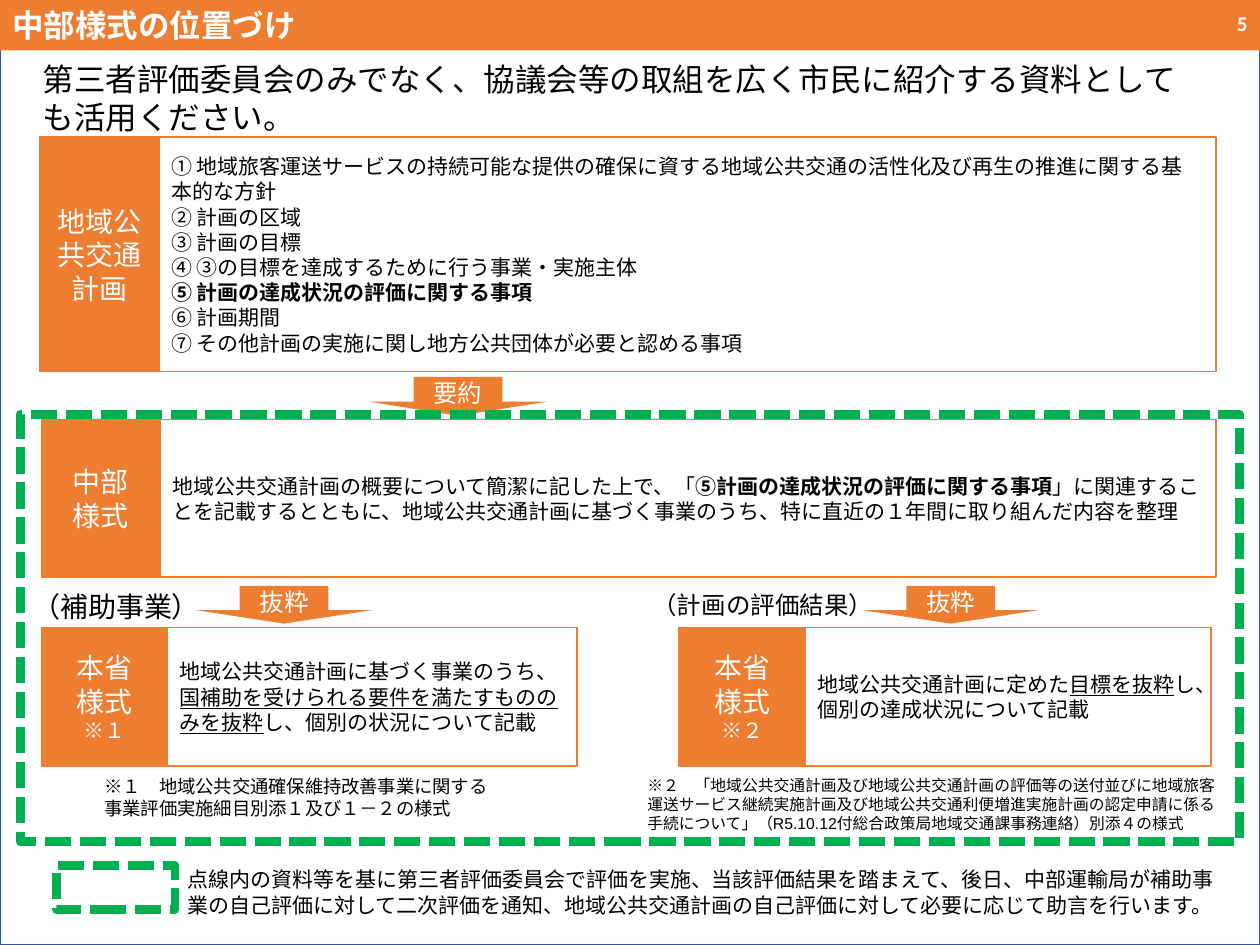
from dataclasses import dataclass

from pptx import Presentation
from pptx.dml.color import RGBColor
from pptx.enum.dml import MSO_LINE
from pptx.enum.shapes import MSO_SHAPE
from pptx.enum.text import MSO_ANCHOR, PP_ALIGN
from pptx.util import Inches, Pt

RECTANGLE, DOWN_ARROW = MSO_SHAPE.RECTANGLE, MSO_SHAPE.DOWN_ARROW
TOP, MIDDLE = MSO_ANCHOR.TOP, MSO_ANCHOR.MIDDLE
LEFT, CENTER, RIGHT = PP_ALIGN.LEFT, PP_ALIGN.CENTER, PP_ALIGN.RIGHT
SHORT_DASH = MSO_LINE.SQUARE_DOT
COLUMNS, ROWS, CELL = 100, 75, 0.1


@dataclass(frozen=True)
class Theme:
    """Colours, fonts and type sizes of the slide."""
    orange: str = "ED7D31"
    green: str = "00B050"
    navy: str = "2F5597"
    white: str = "FFFFFF"
    black: str = "000000"
    font: str = "Calibri"
    note_font: str = "Arial"
    title: float = 18
    label: float = 16
    arrow: float = 14
    body: float = 12
    note: float = 10.5
    small_note: float = 9
    rule: float = 1
    dash: float = 5


THEME = Theme()


@dataclass(frozen=True)
class Box:
    """A region measured in grid cells."""
    left: float
    top: float
    width: float
    height: float

    def inner(self, left, top, width, height):
        """Return a region placed relative to this one."""
        return Box(self.left + left, self.top + top, width, height)

    def lengths(self):
        """Return the position and size as slide lengths."""
        cells = (self.left, self.top, self.width, self.height)
        return [Inches(round(cell * CELL, 2)) for cell in cells]


@dataclass(frozen=True)
class Span:
    """A stretch of text with its own style."""
    text: str
    size: float = THEME.body
    bold: bool = False
    underline: bool = False


def write(shape, paras, color=THEME.black, align=LEFT, anchor=MIDDLE, font=THEME.font):
    """Fill a shape with paragraphs, each a list of spans."""
    frame = shape.text_frame
    frame.word_wrap = True
    frame.vertical_anchor = anchor
    for index, spans in enumerate(paras):
        para = frame.add_paragraph() if index else frame.paragraphs[0]
        para.alignment = align
        for span in spans:
            run = para.add_run()
            run.text = span.text
            run.font.name = font
            run.font.size = Pt(span.size)
            run.font.bold = span.bold
            run.font.underline = span.underline
            run.font.color.rgb = RGBColor.from_string(color)


def add_text(page, box, paras, **style):
    """Add a text box."""
    write(page.shapes.add_textbox(*box.lengths()), paras, **style)


def add_block(page, box, fill=None, line=None, weight=THEME.rule, kind=RECTANGLE):
    """Add a preset shape with an optional fill and outline."""
    shape = page.shapes.add_shape(kind, *box.lengths())
    shape.shadow.inherit = False
    if fill:
        shape.fill.solid()
        shape.fill.fore_color.rgb = RGBColor.from_string(fill)
    else:
        shape.fill.background()
    if line:
        shape.line.color.rgb = RGBColor.from_string(line)
        shape.line.width = Pt(weight)
    else:
        shape.line.fill.background()
    return shape


def add_dashed(page, box):
    """Add a green dashed outline."""
    outline = add_block(page, box, line=THEME.green, weight=THEME.dash)
    outline.line.dash_style = SHORT_DASH


def add_arrow(page, box, text):
    """Add a wide down arrow with a caption."""
    arrow = add_block(page, box, THEME.orange, kind=DOWN_ARROW)
    arrow.adjustments[0], arrow.adjustments[1] = 0.5, 0.36
    write(arrow, [[Span(text, THEME.arrow)]], THEME.white, CENTER)


def add_card(page, box, label_width, label, body):
    """Add an orange label joined to a white body."""
    label_box = box.inner(0, 0, label_width, box.height)
    body_box = box.inner(label_width, 0, box.width - label_width, box.height)
    write(add_block(page, label_box, THEME.orange, THEME.orange), label, THEME.white, CENTER)
    write(add_block(page, body_box, THEME.white, THEME.orange), body)


def add_header(page, box):
    """Add the title bar, page number and lead sentence."""
    bar = add_block(page, box.inner(0, 0, box.width, 4), THEME.orange)
    write(bar, [[Span("中部様式の位置づけ", THEME.title, bold=True)]], THEME.white, anchor=TOP)
    add_text(page, box.inner(88.2, 0, 11.8, 3.7), [[Span("5", bold=True)]],
             color=THEME.white, align=RIGHT)
    lead = "第三者評価委員会のみでなく、協議会等の取組を広く市民に紹介する資料としても活用ください。"
    add_text(page, box.inner(2.4, 4.3, 93.7, 7.1), [[Span(lead, THEME.title)]], anchor=TOP)


def add_plan(page, box):
    """Add the regional plan with its seven items and the arrow below."""
    items = (
        "① 地域旅客運送サービスの持続可能な提供の確保に資する地域公共交通の活性化及び再生の推進に関する基本的な方針",
        "② 計画の区域",
        "③ 計画の目標",
        "④ ③の目標を達成するために行う事業・実施主体",
        "⑤ 計画の達成状況の評価に関する事項",
        "⑥ 計画期間",
        "⑦ その他計画の実施に関し地方公共団体が必要と認める事項",
    )
    body = [[Span(item, bold=item.startswith("⑤"))] for item in items]
    add_card(page, box, 9.4, [[Span("地域公共交通計画", THEME.label)]], body)
    add_arrow(page, box.inner(26.1, 19, 14.1, 3.1), "要約")


def add_summary(page, box):
    """Add the regional form that sums up the plan."""
    label = [[Span(text, THEME.label)] for text in ("中部", "様式")]
    body = [[
        Span("地域公共交通計画の概要について簡潔に記した上で、「"),
        Span("⑤計画の達成状況の評価に関する事項", bold=True),
        Span("」に関連することを記載するとともに、地域公共交通計画に基づく事業のうち、"
             "特に直近の１年間に取り組んだ内容を整理"),
    ]]
    add_card(page, box, 9.4, label, body)


def add_excerpt(page, box, mark, caption, caption_left, arrow_left, body):
    """Add a ministry form with its caption and arrow above."""
    add_text(page, box.inner(caption_left, 0, 20.7, 3.7), [[caption]], anchor=TOP)
    add_arrow(page, box.inner(arrow_left, 0.2, 14.1, 3), "抜粋")
    label = [[Span("本省", THEME.label)], [Span("様式", THEME.label)], [Span(mark)]]
    add_card(page, box.inner(0, 3.5, box.width, 11), 10, label, [body])


def add_notes(page, box):
    """Add the two footnotes under the ministry forms."""
    first = "※１　地域公共交通確保維持改善事業に関する事業評価実施細目別添１及び１－２の様式"
    second = ("※２　「地域公共交通計画及び地域公共交通計画の評価等の送付並びに地域旅客運送サービス継続実施計画"
              "及び地域公共交通利便増進実施計画の認定申請に係る手続について」"
              "（R5.10.12付総合政策局地域交通課事務連絡）別添４の様式")
    add_text(page, box.inner(0, 0, 32.5, 4.5), [[Span(first, THEME.note)]], anchor=TOP)
    add_text(page, box.inner(43.1, 0.1, 47.6, 5.6), [[Span(second, THEME.small_note)]],
             anchor=TOP, font=THEME.note_font)


def add_legend(page, box):
    """Add the dashed key and its explanation."""
    add_dashed(page, box.inner(0, 0.6, 9.4, 3.5))
    text = ("点線内の資料等を基に第三者評価委員会で評価を実施、当該評価結果を踏まえて、後日、"
            "中部運輸局が補助事業の自己評価に対して二次評価を通知、"
            "地域公共交通計画の自己評価に対して必要に応じて助言を行います。")
    add_text(page, box.inner(9.4, 0, box.width - 9.4, box.height), [[Span(text)]])


def main():
    """Build the slide and save it."""
    deck = Presentation()
    deck.slide_width, deck.slide_height = Inches(COLUMNS * CELL), Inches(ROWS * CELL)
    page = deck.slides.add_slide(deck.slide_layouts[6])
    whole = Box(0, 0, COLUMNS, ROWS)
    add_block(page, whole, line=THEME.navy)
    add_header(page, whole.inner(0, 0, COLUMNS, 11.4))
    add_plan(page, whole.inner(3.2, 10.9, 93.3, 18.6))
    add_summary(page, whole.inner(3.3, 33.3, 93.2, 12.5))
    add_excerpt(page, whole.inner(3.3, 46.3, 42.5, 14.5), "※１",
                Span("（補助事業）", THEME.label), -1.7, 12.2,
                [Span("地域公共交通計画に基づく事業のうち、"),
                 Span("国補助を受けられる要件を満たすもののみを抜粋", underline=True),
                 Span("し、個別の状況について記載")])
    add_excerpt(page, whole.inner(53.9, 46.3, 42.2, 14.5), "※２",
                Span("（計画の評価結果）", THEME.arrow), -3.1, 14.5,
                [Span("地域公共交通計画に定めた"),
                 Span("目標を抜粋", underline=True),
                 Span("し、個別の達成状況について記載")])
    add_notes(page, whole.inner(7.3, 61, 90.7, 5.7))
    add_dashed(page, whole.inner(1.6, 32.9, 96.8, 33.9))
    add_legend(page, whole.inner(4.5, 68.1, 93.9, 5.4))
    deck.save("out.pptx")


if __name__ == "__main__":
    main()
